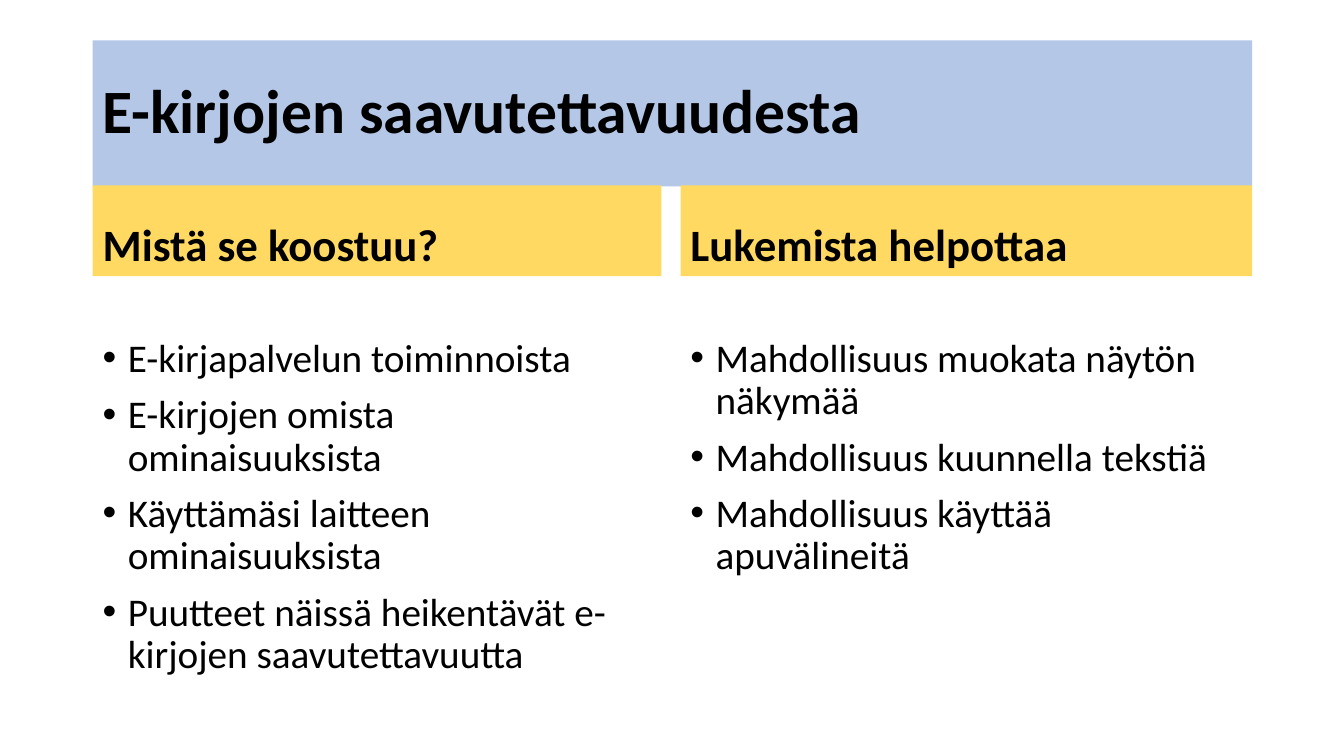
from lxml.etree import SubElement
from pptx import Presentation
from pptx.dml.color import RGBColor as Rgb
from pptx.enum.shapes import MSO_SHAPE as Shape
from pptx.enum.text import MSO_ANCHOR as Anchor, PP_ALIGN as Align
from pptx.oxml.ns import qn
from pptx.util import Inches, Pt

COLORS = {"title": "B4C7E7", "head": "FFD961", "text": "000000"}
LEFT, WIDTH = 0.92, 11.5
COLUMNS = [
    (LEFT, 5.64, "Mistä se koostuu?", [
        "E-kirjapalvelun toiminnoista",
        "E-kirjojen omista ominaisuuksista",
        "Käyttämäsi laitteen ominaisuuksista",
        "Puutteet näissä heikentävät e-kirjojen saavutettavuutta",
    ]),
    (6.75, 5.67, "Lukemista helpottaa", [
        "Mahdollisuus muokata näytön näkymää",
        "Mahdollisuus kuunnella tekstiä",
        "Mahdollisuus käyttää apuvälineitä",
    ]),
]


def set_all(item, values):
    for name, value in values.items():
        setattr(item, name, value)


def write(para, text, size, bold=False, space=0):
    set_all(para, {"alignment": Align.LEFT, "line_spacing": 0.9,
                   "space_before": Pt(space)})
    run = para.add_run()
    run.text = text
    set_all(run.font, {"name": "Calibri", "size": Pt(size), "bold": bold})
    run.font.color.rgb = Rgb.from_string(COLORS["text"])


def add_band(slide, box, text, color, size, anchor):
    band = slide.shapes.add_shape(Shape.RECTANGLE, *map(Inches, box))
    band.shadow.inherit = False
    band.fill.solid()
    band.fill.fore_color.rgb = Rgb.from_string(COLORS[color])
    band.line.fill.background()
    frame = band.text_frame
    set_all(frame, {"word_wrap": True, "vertical_anchor": anchor})
    write(frame.paragraphs[0], text, size, bold=True)


def add_bullet(para):
    props = para._p.get_or_add_pPr()
    props.set("marL", str(Inches(0.25)))
    props.set("indent", str(Inches(-0.25)))
    SubElement(props, qn("a:buFont"), typeface="Arial")
    SubElement(props, qn("a:buChar"), char="•")


def add_list(slide, box, items):
    frame = slide.shapes.add_textbox(*map(Inches, box)).text_frame
    frame.word_wrap = True
    for index, text in enumerate(items):
        para = frame.add_paragraph() if index else frame.paragraphs[0]
        write(para, text, 28, space=10)
        add_bullet(para)


def main():
    deck = Presentation()
    set_all(deck, {"slide_width": Inches(13.33), "slide_height": Inches(7.5)})
    slide = deck.slides.add_slide(deck.slide_layouts[6])
    add_band(slide, (LEFT, 0.4, WIDTH, 1.45), "E-kirjojen saavutettavuudesta",
             "title", 44, Anchor.MIDDLE)
    for left, width, head, items in COLUMNS:
        add_band(slide, (left, 1.84, width, 0.9), head, "head", 32, Anchor.BOTTOM)
        add_list(slide, (left, 3.31, width, 3.46), items)
    deck.save("out.pptx")


if __name__ == "__main__":
    main()
